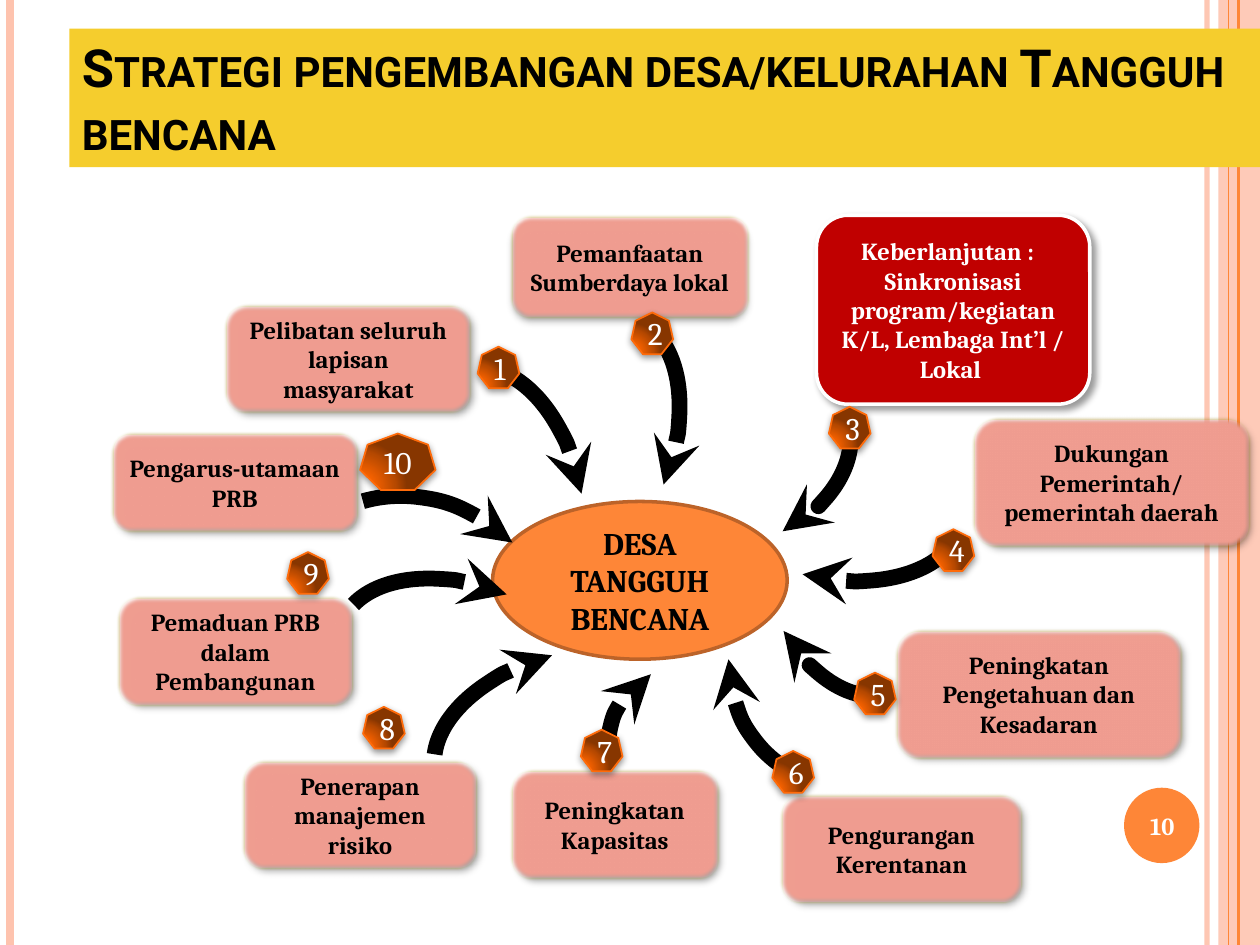
from lxml import etree
from pptx import Presentation
from pptx.dml.color import RGBColor
from pptx.enum.shapes import MSO_CONNECTOR, MSO_SHAPE
from pptx.enum.text import MSO_ANCHOR, PP_ALIGN
from pptx.oxml import parse_xml
from pptx.oxml.ns import nsdecls, qn
from pptx.util import Cm, Pt

RECT, ROUND, OVAL = MSO_SHAPE.RECTANGLE, MSO_SHAPE.ROUNDED_RECTANGLE, MSO_SHAPE.OVAL
ARC, HEPT = MSO_SHAPE.ARC, MSO_SHAPE.HEPTAGON
MID, LOW = MSO_ANCHOR.MIDDLE, MSO_ANCHOR.BOTTOM
CENTER, LEFT = PP_ALIGN.CENTER, PP_ALIGN.LEFT
STRAIGHT = MSO_CONNECTOR.STRAIGHT
NS = nsdecls("a")
rgb = RGBColor.from_string


def add(kind, at, fill=None, line=None, width=2, shade=None, soft=False):
    """Add a shape; shade is (opacity %, blur pt, distance pt, angle)."""
    shape = slide.shapes.add_shape(kind, *[Cm(v) for v in at])
    shape.shadow.inherit = False
    if fill:
        shape.fill.solid()
        shape.fill.fore_color.rgb = rgb(fill)
    else:
        shape.fill.background()
    if line:
        shape.line.color.rgb = rgb(line)
        shape.line.width = Pt(width)
    else:
        shape.line.fill.background()
    fx = shape._element.spPr.find(qn("a:effectLst"))
    if shade:
        alpha, blur, dist, angle = shade
        fx.append(parse_xml(
            f'<a:outerShdw {NS} blurRad="{Pt(blur)}" dist="{Pt(dist)}" '
            f'dir="{angle * 60000}" rotWithShape="0"><a:srgbClr val="000000">'
            f'<a:alpha val="{alpha * 1000}"/></a:srgbClr></a:outerShdw>'))
    if soft:
        etree.SubElement(fx, qn("a:softEdge"), rad=str(Pt(2.5)))
    return shape


def write(shape, lines, size, color, bold=True, font="Cambria",
          align=CENTER, anchor=MID):
    frame = shape.text_frame
    frame.word_wrap = True
    frame.vertical_anchor = anchor
    for i, line in enumerate(lines):
        para = frame.add_paragraph() if i else frame.paragraphs[0]
        para.alignment = align
        run = para.add_run()
        run.text = line
        run.font.name = font
        run.font.size = Pt(size)
        run.font.bold = bold
        run.font.color.rgb = rgb(color)
    return run


deck = Presentation()
deck.slide_width, deck.slide_height = Cm(25.4), Cm(19.05)
slide = deck.slides.add_slide(deck.slide_layouts[6])

# Side stripes, back to front
band = add(RECT, (24.56, 0, 0.84, 19.05), "FEC3AE")
clear = [(band._element.spPr, 87)]
for x, color, width in [(24.33, "FEC3AE", 3), (0.2, "FEC3AE", 4.5),
                        (24.97, "FE8637", 1.5), (24.77, "FE8637", 0.75)]:
    rule = slide.shapes.add_connector(STRAIGHT, Cm(x), 0, Cm(x), Cm(19.05))
    rule.line.color.rgb = rgb(color)
    rule.line.width = Pt(width)
    etree.SubElement(rule._element.spPr, qn("a:effectLst"))
    if width == 3:
        clear.append((rule._element.spPr, 93))
for props, share in clear:
    tone = next(props.iter(qn("a:srgbClr")))
    etree.SubElement(tone, qn("a:alpha"), val=str(share * 1000))

# Page number
add(OVAL, (22.66, 15.88, 1.52, 1.52), "FE8637")
page = slide.shapes.add_textbox(Cm(22.58), Cm(15.93), Cm(1.7), Cm(1.45))
write(page, ["10"], 14, "FFFFFF")

# Strategy boxes
boxes = [
    ((4.55, 6.15, 4.95, 2.18), "Pelibatan seluruh lapisan masyarakat", 45),
    ((10.31, 4.37, 4.78, 2.03), "Pemanfaatan Sumberdaya lokal", 90),
    ((19.63, 8.43, 5.56, 2.59), "Dukungan Pemerintah/ pemerintah daerah", 45),
    ((18.06, 12.7, 5.77, 2.59), "Peningkatan Pengetahuan dan Kesadaran", 45),
    ((15.75, 16.03, 4.85, 2.18), "Pengurangan Kerentanan", 45),
    ((10.31, 15.54, 4.17, 2.18), "Peningkatan Kapasitas", 45),
    ((4.9, 15.34, 4.72, 2.18), "Penerapan manajemen risiko", 45),
    ((2.39, 12.04, 4.72, 2.18), "Pemaduan PRB dalam Pembangunan", 45),
    ((2.26, 8.74, 4.95, 1.98), "Pengarus-utamaan PRB", 45),
]
for at, text, angle in boxes:
    box = add(ROUND, at, "F19E91", "B59821", shade=(40, 4, 3, angle), soft=True)
    write(box, [text], 14, "000000")

# Centre and highlighted box
hub = add(OVAL, (9.93, 10.11, 5.94, 3.18), "FE8637", "BC6329")
write(hub, ["DESA TANGGUH", "BENCANA"], 18, "000000")
key = add(ROUND, (16.46, 4.34, 5.51, 3.81), "C00000", "FFFFFF",
          shade=(40, 4, 3, 45))
write(key, ["Keberlanjutan :  ",
            "Sinkronisasi program/kegiatan K/L, Lembaga Int’l / Lokal "],
      14, "FFFFFF")

# Title
title = add(RECT, (1.4, 0.58, 24, 2.79), "F5CD2D")
run = write(title, ["Strategi pengembangan desa/kelurahan Tangguh bencana"],
            30, "000000", font="Roboto", align=LEFT, anchor=LOW)
run.font._element.set("cap", "small")

# Curved arrows: place, turn, end of the sweep
LONG, MEAN, SHORT = 214.72, 208.87, 200.62
arrows = [
    ((9.91, 6.22, 3.58, 5.84), 22.7, LONG),
    ((13.39, 7.04, 3.25, 4.47), 64.2, LONG),
    ((14.78, 6.91, 3.58, 5.84), 104.8, LONG),
    ((15.6, 9.88, 2.57, 4.32), 150.2, LONG),
    ((7.8, 10.74, 3.58, 5.84), 292.6, LONG),
    ((8.18, 7.39, 3.58, 5.84), 350.6, LONG),
    ((9.83, 12.01, 3.58, 5.84), 256.2, LONG),
    ((12.37, 13.26, 3.1, 3.33), 251, MEAN),
    ((5.38, 9.91, 6.1, 7.01), 333.1, SHORT),
    ((14.73, 10.13, 4.83, 5.69), 198.3, SHORT),
]
for at, turn, end in arrows:
    arc = add(ARC, at, line="000000", width=9)
    arc.rotation = turn
    arc.adjustments[0], arc.adjustments[1] = 166.99, end
    etree.SubElement(arc.line._get_or_add_ln(), qn("a:tailEnd"), type="stealth")

# Number badges
STOPS = [(0, "FD6400"), (30, "F46100"), (75, "B74900"), (100, "873600")]
stops = "".join(f'<a:gs pos="{p * 1000}"><a:srgbClr val="{c}"/></a:gs>'
                for p, c in STOPS)
GRAD = (f'<a:gradFill {NS} rotWithShape="1"><a:gsLst>{stops}</a:gsLst>'
        '<a:path path="circle"><a:fillToRect l="5000" t="100000" r="120000" '
        'b="10000"/></a:path></a:gradFill>')
spots = [(9.63, 6.99), (12.73, 6.3), (16.71, 8.2), (18.8, 10.67),
         (17.22, 13.56), (15.57, 15.14), (11.71, 14.71), (7.32, 14.25),
         (5.79, 11.13), (7.26, 8.74)]
for num, spot in enumerate(spots, 1):
    size = (1.52, 1.14) if num == 10 else (0.84, 0.84)
    badge = add(HEPT, spot + size, line="FF6B0A", width=1,
                shade=(42, 4, 1.6, 90))
    props = badge._element.spPr
    props.replace(props.find(qn("a:noFill")), parse_xml(GRAD))
    write(badge, [str(num)], 18, "FFFFFF", bold=False)

deck.save("out.pptx")
